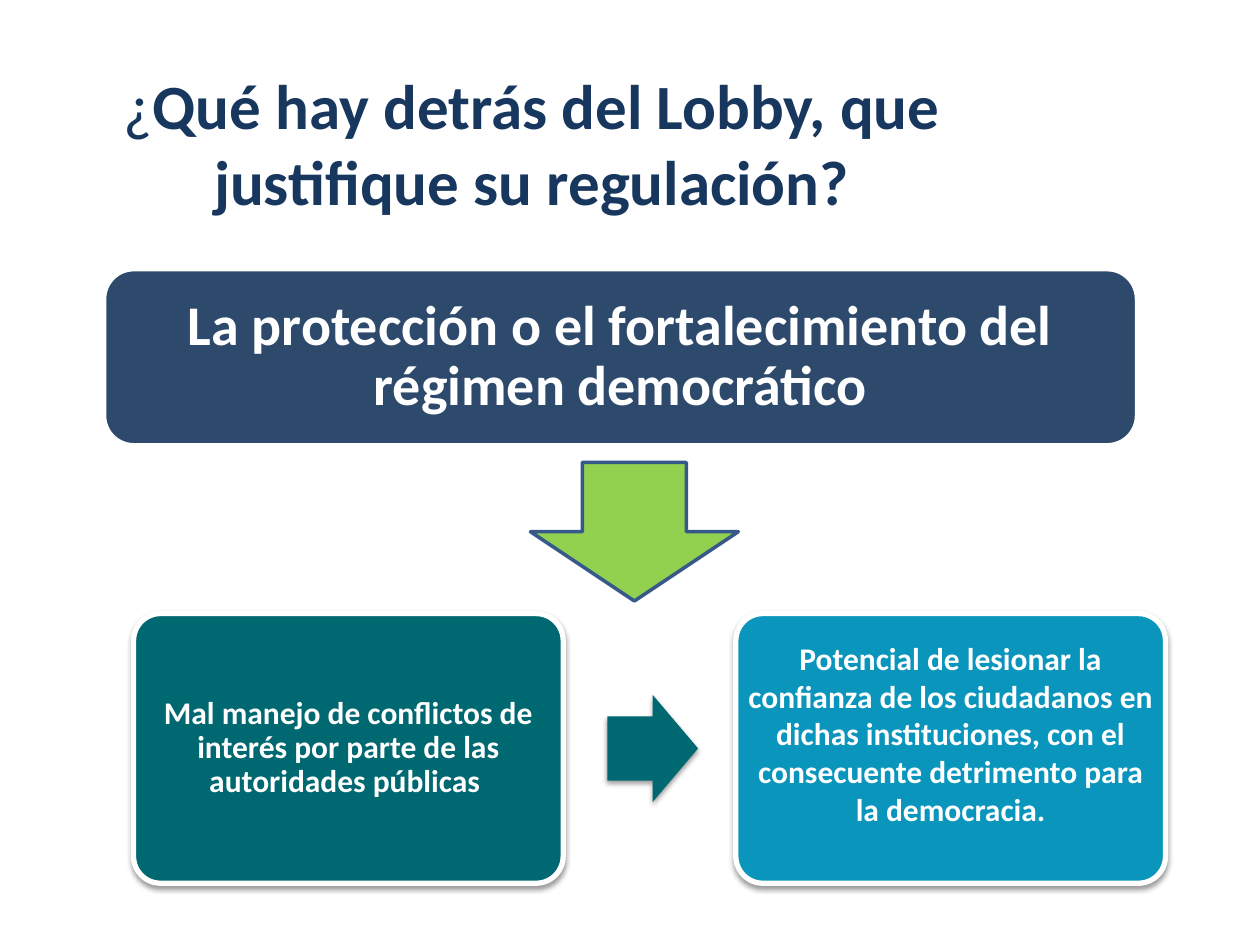
from lxml import etree
from pptx import Presentation
from pptx import util as u
from pptx.dml.color import RGBColor
from pptx.enum import shapes, text
from pptx.oxml import ns

COLORS = {
    "title": "17375E", "banner": "17365D", "white": "FFFFFF", "black": "000000",
    "green": "92D050", "outline": "37598A", "teal": "006871", "cyan": "0A96BC",
}
FORMS = shapes.MSO_SHAPE


def rgb(name):
    """Return the named colour."""
    return RGBColor.from_string(COLORS[name])


def add_alpha(color, percent):
    """Give a colour element its opacity."""
    etree.SubElement(color, ns.qn("a:alpha"), val=str(percent * 1000))


def add_shadow(shape):
    """Cast a soft shadow straight below the shape."""
    effects = shape._element.spPr.find(ns.qn("a:effectLst"))
    shadow = etree.SubElement(
        effects, ns.qn("a:outerShdw"), blurRad=str(u.Pt(3.1)),
        dist=str(u.Pt(1.6)), dir="5400000", rotWithShape="0")
    add_alpha(etree.SubElement(shadow, ns.qn("a:srgbClr"), val=COLORS["black"]), 38)


def add_form(page, form, box, fill, line=None, width=0):
    """Add a filled preset shape with an optional outline."""
    shape = page.shapes.add_shape(form, *map(u.Inches, box))
    shape.shadow.inherit = False
    shape.fill.solid()
    shape.fill.fore_color.rgb = rgb(fill)
    if line:
        shape.line.color.rgb = rgb(line)
        shape.line.width = u.Pt(width)
    else:
        shape.line.fill.background()
    return shape


def write(shape, spans, size, color, inset, spacing=1.0, lift=0):
    """Write one centred paragraph from (words, bold) spans."""
    frame = shape.text_frame
    frame.word_wrap = True
    frame.vertical_anchor = text.MSO_ANCHOR.MIDDLE
    frame.margin_left = frame.margin_right = frame.margin_top = u.Inches(inset)
    frame.margin_bottom = u.Inches(inset + lift)
    para = frame.paragraphs[0]
    para.alignment = text.PP_ALIGN.CENTER
    para.line_spacing = spacing
    for words, bold in spans:
        span = para.add_run()
        span.text = words
        span.font.name = "Calibri"
        span.font.size = u.Pt(size)
        span.font.bold = bold
        span.font.color.rgb = rgb(color)


def add_title(page, box):
    """Place the question at the top."""
    title = page.shapes.add_textbox(*map(u.Inches, box))
    spans = [("¿", False), ("Qué hay detrás del Lobby, que justifique su regulación?", True)]
    write(title, spans, 36, "title", 0.1)


def add_banner(page, box):
    """Place the main answer in a translucent banner."""
    banner = add_form(page, FORMS.ROUNDED_RECTANGLE, box, "banner", "white", 2)
    add_alpha(banner._element.spPr.find(".//" + ns.qn("a:srgbClr")), 90)
    words = "La protección o el fortalecimiento del régimen democrático"
    write(banner, [(words, True)], 32, "white", 0.06, 0.9)


def add_process(page, box):
    """Place the cause and effect cards with an arrow between them."""
    left, top, width, height = box
    card_width, arrow_width, arrow_height = 3.41, 0.72, 0.85
    cards = [
        (left, "teal", "Mal manejo de conflictos de interés por parte de las "
         "autoridades públicas ", 0.9, 0),
        (left + width - card_width, "cyan", "Potencial de lesionar la confianza de los "
         "ciudadanos en dichas instituciones, con el consecuente detrimento para la "
         "democracia.", 1.0, 0.24),
    ]
    for x, fill, words, spacing, lift in cards:
        card = add_form(page, FORMS.ROUNDED_RECTANGLE, (x, top, card_width, height),
                        fill, "white", 3)
        card.adjustments[0] = 0.1
        add_shadow(card)
        write(card, [(words, True)], 18, "white", 0.01, spacing, lift)
    arrow_box = (left + card_width + 0.35, top + (height - arrow_height) / 2,
                 arrow_width, arrow_height)
    arrow = add_form(page, FORMS.RIGHT_ARROW, arrow_box, "teal")
    arrow.adjustments[0] = 0.6
    add_shadow(arrow)


def main():
    """Build and save the deck."""
    deck = Presentation()
    deck.slide_width, deck.slide_height = u.Inches(10), u.Inches(7.5)
    page = deck.slides.add_slide(deck.slide_layouts[6])
    add_title(page, (0.67, 0.44, 7.1, 1.38))
    add_banner(page, (0.83, 2.14, 8.19, 1.39))
    add_form(page, FORMS.DOWN_ARROW, (4.21, 3.67, 1.65, 1.1), "green", "outline", 2)
    add_process(page, (1.06, 4.87, 8.19, 2.14))
    deck.save("out.pptx")


if __name__ == "__main__":
    main()
